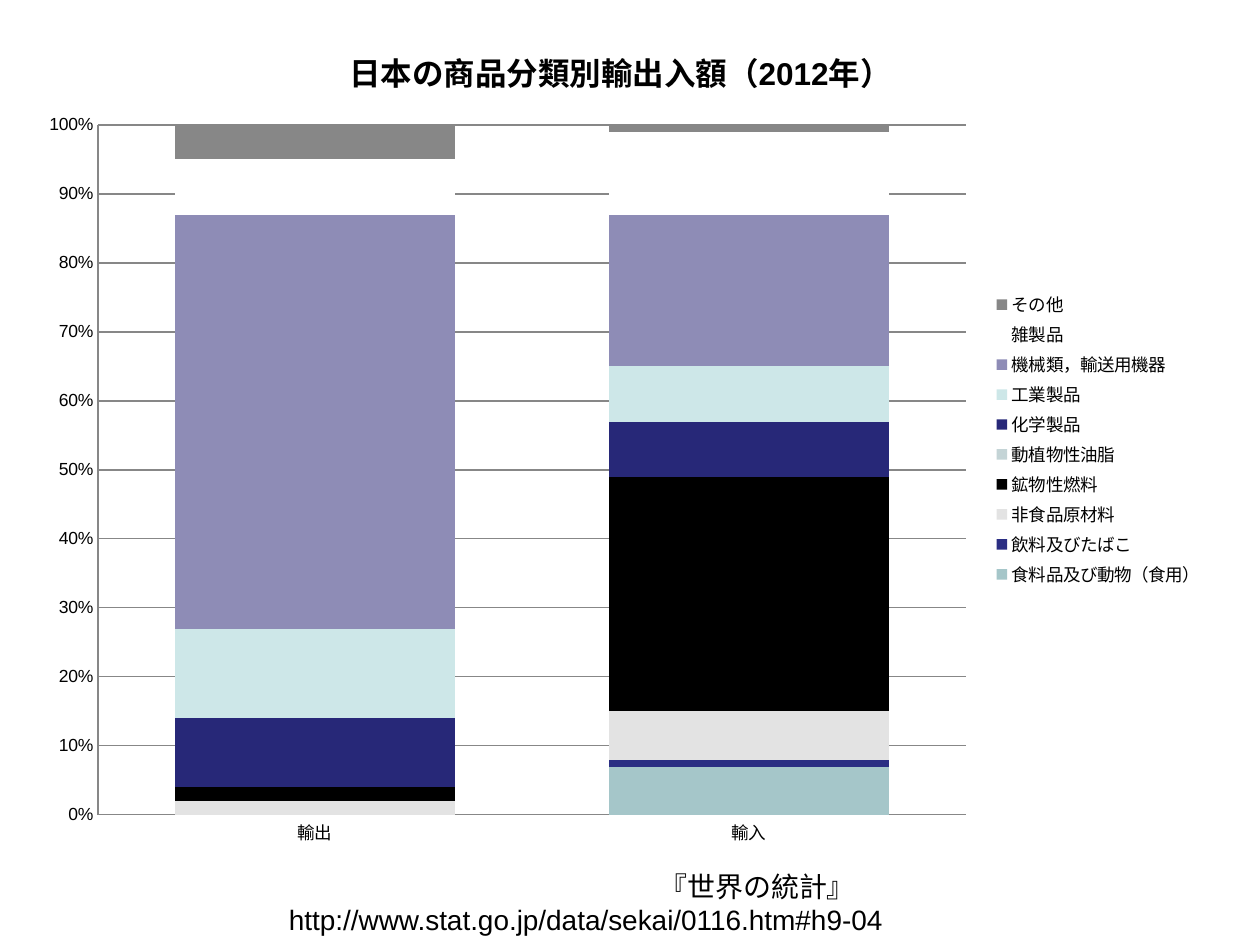
from pptx import Presentation
from pptx.chart.data import CategoryChartData
from pptx.dml.color import RGBColor
from pptx.enum.chart import XL_CHART_TYPE, XL_LEGEND_POSITION, XL_TICK_MARK
from pptx.enum.text import PP_ALIGN
from pptx.oxml import parse_xml
from pptx.oxml.ns import nsdecls
from pptx.util import Pt

PX = 914400 // 126
FONT = "Arial"
GOODS = [
    ("食料品及び動物（食用）", (0, 7), "A5C6C9"),
    ("飲料及びたばこ", (0, 1), "2B2E83"),
    ("非食品原材料", (2, 7), "E3E3E3"),
    ("鉱物性燃料", (2, 34), "000000"),
    ("動植物性油脂", (0, 0), "C4D4D6"),
    ("化学製品", (10, 8), "272878"),
    ("工業製品", (13, 8), "CDE7E8"),
    ("機械類，輸送用機器", (60, 22), "8E8CB6"),
    ("雑製品", (8, 12), "FFFFFF"),
    ("その他", (5, 1), "878787"),
]


def px(*sizes):
    return [size * PX for size in sizes]


def paint(color, code):
    color.rgb = RGBColor.from_string(code)


def style(font, size, bold=False):
    font.name, font.size, font.bold = FONT, Pt(size), bold
    paint(font.color if hasattr(font, "color") else font, "000000")


def place(chart, box, plot):
    """Fix the inner plot area, given in px from the chart's corner."""
    wide, high = box[2:]
    parts = zip("xywh", plot, (wide, high, wide, high))
    sizes = "".join(f'<c:{key} val="{part / full:.4f}"/>' for key, part, full in parts)
    area = chart.plots[0]._element.getparent()
    for old in area.findall("{*}layout"):
        area.remove(old)
    area.insert(0, parse_xml(
        f'<c:layout {nsdecls("c")}><c:manualLayout><c:layoutTarget val="inner"/>'
        f'<c:xMode val="edge"/><c:yMode val="edge"/>{sizes}</c:manualLayout></c:layout>'))


def trade(slide, box):
    data = CategoryChartData()
    data.categories = ["輸出", "輸入"]
    for name, shares, _ in GOODS:
        data.add_series(name, shares)
    chart = slide.shapes.add_chart(
        XL_CHART_TYPE.COLUMN_STACKED_100, *px(*box), data).chart
    style(chart.font, 10)

    title = chart.chart_title.text_frame
    title.text = "日本の商品分類別輸出入額（2012年）"
    style(title.paragraphs[0].runs[0].font, 18, True)
    chart.chart_title.include_in_layout = False

    plot = chart.plots[0]
    plot.gap_width, plot.overlap, plot.vary_by_categories = 55, 100, False
    for bar, (_, _, code) in zip(plot.series, GOODS):
        bar.format.fill.solid()
        paint(bar.format.fill.fore_color, code)

    scale = chart.value_axis
    scale.minimum_scale, scale.maximum_scale, scale.major_unit = 0, 1, 0.1
    scale.has_major_gridlines = True
    scale.tick_labels.number_format = "0%"
    scale.tick_labels.number_format_is_linked = False
    for axis in (scale, chart.category_axis):
        axis.major_tick_mark = axis.minor_tick_mark = XL_TICK_MARK.NONE
        paint(axis.format.line.color, "878787")
    paint(scale.major_gridlines.format.line.color, "878787")

    chart.has_legend = True
    chart.legend.position = XL_LEGEND_POSITION.RIGHT
    chart.legend.include_in_layout = False
    style(chart.legend.font, 10)
    place(chart, box, (73, 109, 868, 690))


def credit(slide, box):
    frame = slide.shapes.add_textbox(*px(*box)).text_frame
    frame.word_wrap = True
    frame.margin_left, frame.margin_right = px(0, 210)
    frame.text = "『世界の統計』　http://www.stat.go.jp/data/sekai/0116.htm#h9-04"
    line = frame.paragraphs[0]
    line.alignment = PP_ALIGN.RIGHT
    style(line.runs[0].font, 16)


def main():
    deck = Presentation()
    deck.slide_width, deck.slide_height = px(1260, 945)
    slide = deck.slides.add_slide(deck.slide_layouts[6])
    credit(slide, (278, 863, 815, 47))
    trade(slide, (25, 16, 1191, 847))
    deck.save("out.pptx")


if __name__ == "__main__":
    main()
